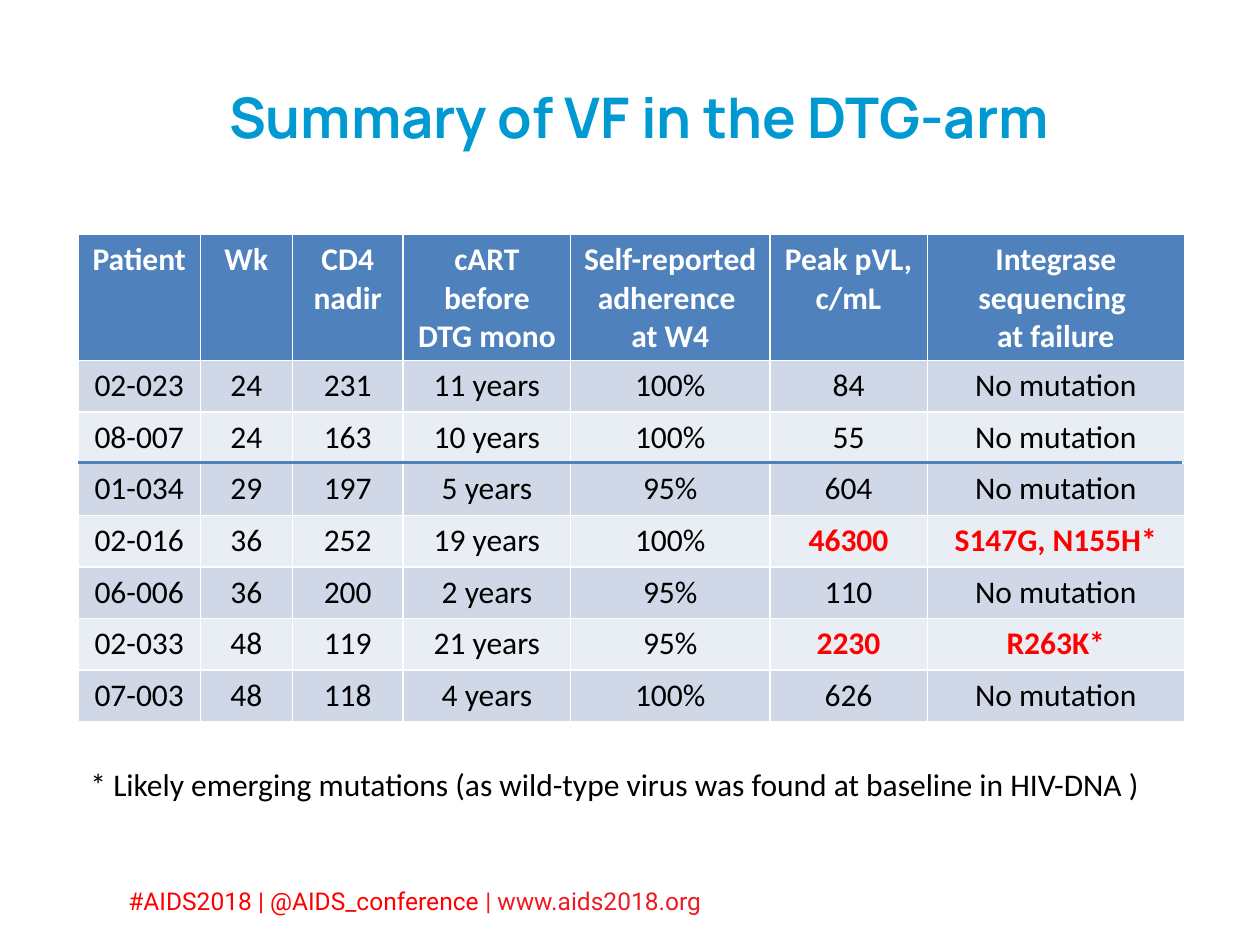
"""Build the slide that sums up virological failure in the DTG arm."""
from lxml.etree import SubElement
from pptx import Presentation
from pptx.dml.color import RGBColor as RGB
from pptx.enum.shapes import MSO_CONNECTOR as LINK
from pptx.enum.text import MSO_ANCHOR as ANCHOR, PP_ALIGN as ALIGN
from pptx.oxml.ns import qn
from pptx.util import Inches, Pt

WHITE = RGB(0xFF, 0xFF, 0xFF)
BLACK = RGB(0, 0, 0)
RED = RGB(0xFF, 0, 0)
SCARLET = RGB(0xED, 0x1C, 0x24)
SKY = RGB(0x00, 0x99, 0xD2)
BLUE = RGB(0x4F, 0x81, 0xBD)
BANDS = [RGB(0xE9, 0xED, 0xF4), RGB(0xD0, 0xD8, 0xE8)]

HEADS = ["Patient", "Wk", "CD4 nadir", "cART before DTG mono",
         "Self-reported adherence \nat W4", "Peak pVL, c/mL",
         "Integrase sequencing \nat failure"]
CASES = [
    ["02-023", "24", "231", "11 years", "100%", "84", "No mutation"],
    ["08-007", "24", "163", "10 years", "100%", "55", "No mutation"],
    ["01-034", "29", "197", "5 years", "95%", "604", "No mutation"],
    ["02-016", "36", "252", "19 years", "100%", "46300", "S147G, N155H*"],
    ["06-006", "36", "200", "2 years", "95%", "110", "No mutation"],
    ["02-033", "48", "119", "21 years", "95%", "2230", "R263K*"],
    ["07-003", "48", "118", "4 years", "100%", "626", "No mutation"],
]
WIDTHS = [0.97, 0.73, 0.88, 1.33, 1.58, 1.25, 2.04]
LEFT = Inches(0.62)


def style(font, name, size, color, bold=False):
    font.name, font.size, font.bold = name, Pt(size), bold
    font.color.rgb = color


deck = Presentation()
deck.slide_width, deck.slide_height = Inches(10), Inches(7.5)
slide = deck.slides.add_slide(deck.slide_layouts[5])
shapes = slide.shapes

foot = shapes.add_textbox(Inches(0.92), Inches(6.98), Inches(7.35), Inches(0.34))
foot.text_frame.word_wrap = True
line = foot.text_frame.paragraphs[0]
for text, color in [("#AIDS2018 | @AIDS_conference ", RED),
                    ("|\u00a0www.aids2018.org", SCARLET)]:
    run = line.add_run()
    run.text = text
    style(run.font, "Roboto", 14, color)

title = shapes.title
title.left, title.top = LEFT, Inches(0.3)
title.width, title.height = Inches(8.91), Inches(1.25)
title.text_frame.text = "Summary of VF in the DTG-arm"
title.text_frame.vertical_anchor = ANCHOR.MIDDLE
head = title.text_frame.paragraphs[0]
head.alignment = ALIGN.CENTER
style(head.font, "Manrope", 32, SKY, True)

rows = [HEADS] + CASES
table = shapes.add_table(len(rows), len(HEADS), LEFT, Inches(1.86),
                         Inches(sum(WIDTHS)), Inches(3.84)).table
for col, width in zip(table.columns, WIDTHS):
    col.width = Inches(width)
for r, row in enumerate(rows):
    table.rows[r].height = Inches(0.41 if r else 1)
    for c, text in enumerate(row):
        cell = table.cell(r, c)
        cell.text = text
        cell.fill.solid()
        cell.fill.fore_color.rgb = BANDS[r % 2] if r else BLUE
        alert = c > 4 and row[-1].endswith("*")
        color = WHITE if r == 0 else RED if alert else BLACK
        for para in cell.text_frame.paragraphs:
            para.alignment = ALIGN.CENTER
            style(para.font, "Calibri", 18, color, r == 0 or alert)

note = shapes.add_textbox(LEFT, Inches(6.02), Inches(8.63), Inches(0.4))
note.text_frame.word_wrap = False
para = note.text_frame.paragraphs[0]
para.text = ("* Likely emerging mutations (as wild-type virus "
             "was found at baseline in HIV-DNA )")
style(para.font, "Calibri", 18, BLACK)

rule = shapes.add_connector(LINK.STRAIGHT, LEFT, Inches(3.67),
                            Inches(9.38), Inches(3.67))
rule.line.color.rgb = BLUE
rule.line.width = Pt(2)
SubElement(rule._element.spPr, qn("a:effectLst"))

deck.save("out.pptx")
